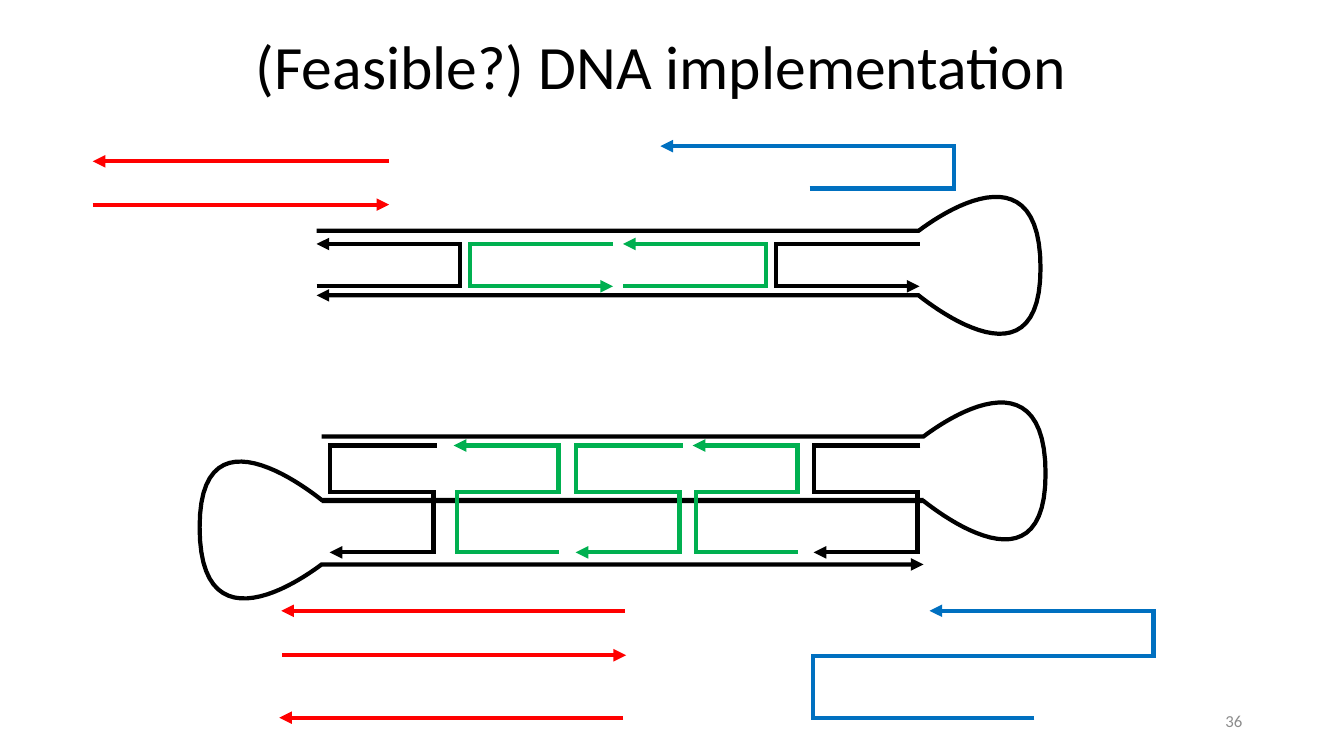
from dataclasses import dataclass

from lxml.etree import SubElement
from pptx import Presentation
from pptx.dml.color import RGBColor
from pptx.enum.shapes import MSO_CONNECTOR
from pptx.enum.text import MSO_ANCHOR, PP_ALIGN
from pptx.oxml.ns import qn
from pptx.util import Inches, Pt


@dataclass(frozen=True)
class Theme:
    font: str = "Calibri"
    title_size: int = 44
    number_size: int = 12
    line_width: int = 3
    black: str = "000000"
    grey: str = "8C8C8C"
    green: str = "00B050"
    red: str = "FF0000"
    blue: str = "0070C0"


THEME = Theme()
SLIDE_SIZE = (13.33, 7.5)
TITLE = "(Feasible?) DNA implementation"
SLIDE_NUMBER = "36"

# Every strand runs from its plain end to its arrow end, in inches.
BRACKET_LEFT, BRACKET_PITCH, BRACKET_WIDTH = 3.14, 1.52, 1.42
BRACKET_ROWS = (2.42, 2.84)
BRACKET_COLOURS = (THEME.black, THEME.green, THEME.green, THEME.black)

STAPLE_ROWS = (4.42, 4.88, 5.48)
STAPLE_STEP = 0.03
STAPLES = [  # left, width, colour
    (3.27, 1.06, THEME.black),
    (4.5, 1.04, THEME.green),
    (5.71, 1.06, THEME.green),
    (6.87, 1.04, THEME.green),
    (8.07, 1.06, THEME.black),
]

STEM_LENGTH, STEM_GAP = 5.97, 0.64
LOOP_CURVES = [  # Bezier control points, measured from the upper hinge
    ((0, 0), (0.36, -0.27), (1.21, -0.75), (1.21, 0.37)),
    ((1.21, 0.37), (1.21, 1.47), (0.33, 0.9), (0, STEM_GAP)),
]
CURVE_STEPS = 24

RED_STRANDS = [  # start x, end x, y
    (3.86, 0.92, 1.6),
    (0.92, 3.86, 2.03),
    (6.2, 2.79, 6.06),
    (2.8, 6.21, 6.5),
    (6.18, 2.77, 7.12),
]
BLUE_STRANDS = [
    [(8.03, 1.87), (9.46, 1.87), (9.46, 1.45), (6.55, 1.45)],
    [(10.26, 7.12), (8.06, 7.12), (8.06, 6.51), (11.44, 6.51), (11.44, 6.06), (9.22, 6.06)],
]


def add_text(slide, text, left, top, width, height, *, size, colour, align=PP_ALIGN.LEFT, spacing=1.0):
    frame = slide.shapes.add_textbox(*map(Inches, (left, top, width, height))).text_frame
    frame.word_wrap = True
    frame.vertical_anchor = MSO_ANCHOR.MIDDLE
    paragraph = frame.paragraphs[0]
    paragraph.alignment = align
    paragraph.line_spacing = spacing
    run = paragraph.add_run()
    run.text = text
    run.font.name = THEME.font
    run.font.size = Pt(size)
    run.font.color.rgb = RGBColor.from_string(colour)


def style_line(shape, colour, arrow):
    shape.line.color.rgb = RGBColor.from_string(colour)
    shape.line.width = Pt(THEME.line_width)
    line = shape.line._get_or_add_ln()
    SubElement(line, qn("a:miter"), lim="800000")
    if arrow:
        SubElement(line, qn("a:tailEnd"), type="triangle")


def add_strand(slide, points, colour, arrow=True):
    """Draw a bent strand with its arrow at the last point."""
    corners = [(Inches(x), Inches(y)) for x, y in points]
    builder = slide.shapes.build_freeform(*corners[0])
    builder.add_line_segments(corners[1:], close=False)
    strand = builder.convert_to_shape()
    strand.fill.background()
    strand.shadow.inherit = False
    style_line(strand, colour, arrow)


def add_straight_strand(slide, start, end, y, colour):
    strand = slide.shapes.add_connector(MSO_CONNECTOR.STRAIGHT, *map(Inches, (start, y, end, y)))
    style_line(strand, colour, True)
    SubElement(strand._element.spPr, qn("a:effectLst"))


def curve_points(curve):
    """Sample a cubic Bezier, leaving out its first point."""
    points = []
    for step in range(1, CURVE_STEPS + 1):
        t = step / CURVE_STEPS
        weights = ((1 - t) ** 3, 3 * t * (1 - t) ** 2, 3 * t**2 * (1 - t), t**3)
        points.append(tuple(sum(w * p[axis] for w, p in zip(weights, curve)) for axis in (0, 1)))
    return points


def hairpin(hinge_x, hinge_y, turn=1):
    """Stem, loop and stem; turn=-1 rotates it by half a turn about the hinge."""
    outline = [(-STEM_LENGTH, 0), (0, 0)]
    for curve in LOOP_CURVES:
        outline += curve_points(curve)
    outline.append((-STEM_LENGTH, STEM_GAP))
    return [(hinge_x + turn * x, hinge_y + turn * y) for x, y in outline]


def bracket(index):
    left = BRACKET_LEFT + index * BRACKET_PITCH
    right = left + BRACKET_WIDTH
    top, bottom = BRACKET_ROWS
    if index % 2:
        return [(right, top), (left, top), (left, bottom), (right, bottom)]
    return [(left, bottom), (right, bottom), (right, top), (left, top)]


def staple(index, left, width):
    right = left + width
    top, middle, bottom = STAPLE_ROWS
    if index % 2:
        inner = left + STAPLE_STEP
        return [(right, bottom), (inner, bottom), (inner, middle),
                (right, middle), (right, top), (left, top)]
    inner = right - STAPLE_STEP
    return [(right, top), (left, top), (left, middle),
            (inner, middle), (inner, bottom), (left, bottom)]


def main():
    presentation = Presentation()
    presentation.slide_width, presentation.slide_height = map(Inches, SLIDE_SIZE)
    slide = presentation.slides.add_slide(presentation.slide_layouts[6])

    add_text(slide, SLIDE_NUMBER, 9.42, 6.95, 3, 0.4,
             size=THEME.number_size, colour=THEME.grey, align=PP_ALIGN.RIGHT)
    add_text(slide, TITLE, 2.44, 0.06, 9, 1.25,
             size=THEME.title_size, colour=THEME.black, spacing=0.9)

    for index, colour in enumerate(BRACKET_COLOURS):
        add_strand(slide, bracket(index), colour)
    add_strand(slide, hairpin(9.11, 2.29), THEME.black)
    add_strand(slide, hairpin(3.19, 5.6, turn=-1)[::-1], THEME.black)
    add_strand(slide, hairpin(9.16, 4.33), THEME.black, arrow=False)
    for index, (left, width, colour) in enumerate(STAPLES):
        add_strand(slide, staple(index, left, width), colour)
    for start, end, y in RED_STRANDS:
        add_straight_strand(slide, start, end, y, THEME.red)
    for points in BLUE_STRANDS:
        add_strand(slide, points, THEME.blue)

    presentation.save("out.pptx")


if __name__ == "__main__":
    main()
